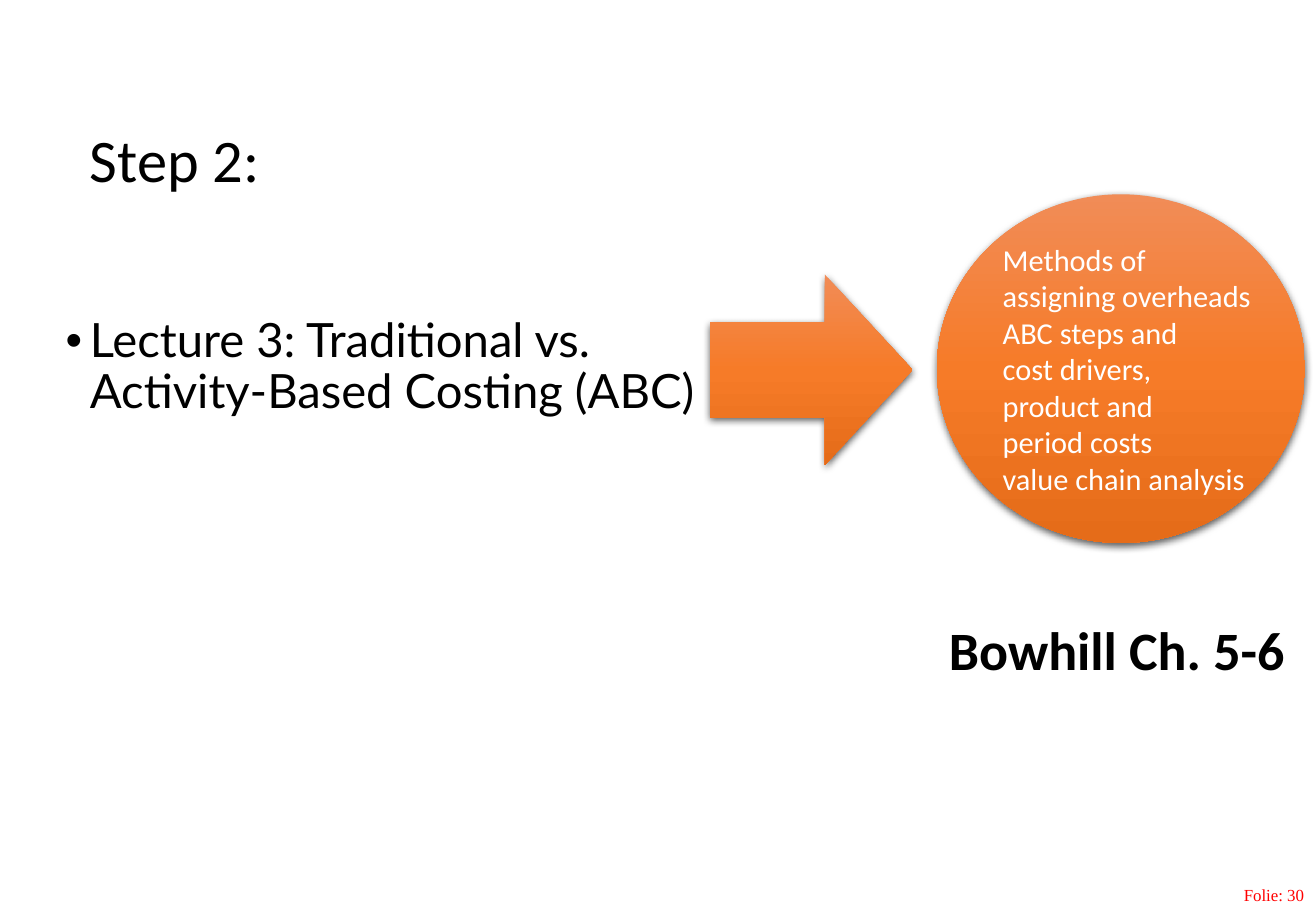
from lxml import etree
from pptx import Presentation
from pptx.dml.color import RGBColor
from pptx.enum.shapes import MSO_SHAPE
from pptx.enum.text import MSO_ANCHOR, MSO_AUTO_SIZE, PP_ALIGN
from pptx.oxml.ns import qn
from pptx.util import Inches, Pt

ELLIPSE, ARROW = MSO_SHAPE.OVAL, MSO_SHAPE.RIGHT_ARROW
TOP, MIDDLE = MSO_ANCHOR.TOP, MSO_ANCHOR.MIDDLE
LEFT, RIGHT = PP_ALIGN.LEFT, PP_ALIGN.RIGHT
NO_FIT = MSO_AUTO_SIZE.NONE
ORANGES = [(0, "F18C57"), (50, "F67B28"), (100, "E56C19")]
TOPICS = [
    "Methods of\vassigning overheads",
    "ABC steps and\vcost drivers,\vproduct and\vperiod costs\vvalue chain analysis",
]


def color(value):
    """Return the colour for a hex string."""
    return RGBColor.from_string(value)


def apply(obj, values):
    """Set attributes of an object from a dict."""
    for name, value in values.items():
        setattr(obj, name, value)


def place(sp, box):
    """Move a shape to a box given in inches."""
    apply(sp, dict(zip(("left", "top", "width", "height"), map(Inches, box))))


def write(tf, lines, font, fill, para=None, **frame):
    """Fill a text frame with formatted paragraphs."""
    apply(tf, {"word_wrap": True, "auto_size": NO_FIT, "vertical_anchor": TOP, **frame})
    for i, line in enumerate(lines):
        p = tf.add_paragraph() if i else tf.paragraphs[0]
        p.text = line
        apply(p, {"alignment": LEFT, "space_before": Pt(0), **(para or {})})
        for r in p.runs:
            apply(r.font, font)
            r.font.color.rgb = color(fill)


def add_child(parent, tag, **attrs):
    """Append a drawing element and return it."""
    return etree.SubElement(parent, qn(tag), {k: str(v) for k, v in attrs.items()})


def add_glossy(slide, kind, box):
    """Add an orange gradient shape with a soft shadow below it."""
    sp = slide.shapes.add_shape(kind, *map(Inches, box))
    sp.fill.gradient()
    sp.fill.gradient_angle = 270
    stops = sp._element.spPr.find(qn("a:gradFill")).find(qn("a:gsLst"))
    for stop in list(stops):
        stops.remove(stop)
    for pos, value in ORANGES:
        add_child(add_child(stops, "a:gs", pos=pos * 1000), "a:srgbClr", val=value)
    sp.line.fill.background()
    sp.shadow.inherit = False
    effects = sp._element.spPr.find(qn("a:effectLst"))
    shadow = add_child(effects, "a:outerShdw", blurRad=Pt(4.5), dist=Pt(1.5),
                       dir=5400000, rotWithShape=0)
    black = add_child(shadow, "a:srgbClr", val="000000")
    add_child(black, "a:alpha", val=63000)
    return sp


def add_label(slide, box, text, font, fill, **options):
    """Add a one-line text box."""
    sp = slide.shapes.add_textbox(*map(Inches, box))
    write(sp.text_frame, [text], font, fill, **options)


def add_title(slide, box):
    """Place the step title."""
    sp = slide.shapes.title
    place(sp, box)
    write(sp.text_frame, ["Step 2:"], {"name": "Calibri", "size": Pt(35.8)}, "000000",
          para={"line_spacing": 0.9}, vertical_anchor=MIDDLE)


def add_lecture(slide, box):
    """Place the bulleted lecture name."""
    sp = slide.placeholders[1]
    place(sp, box)
    insets = dict.fromkeys(
        ("margin_left", "margin_top", "margin_right", "margin_bottom"), Inches(0.04))
    write(sp.text_frame, ["Lecture 3: Traditional vs. Activity-Based Costing (ABC)"],
          {"name": "Lato", "size": Pt(28)}, "000000", para={"line_spacing": 0.9}, **insets)
    pPr = sp.text_frame.paragraphs[0]._p.get_or_add_pPr()
    pPr.set("marL", str(Inches(0.2)))
    pPr.set("indent", str(Inches(-0.2)))
    add_child(pPr, "a:buFont", typeface="Arial")
    add_child(pPr, "a:buChar", char="•")


def add_topics(slide, box):
    """Draw the arrow and the circle of topics inside the box."""
    left, top, width, height = box
    circle_width = 3.03
    circle = add_glossy(slide, ELLIPSE,
                        (left + width - circle_width, top, circle_width, height))
    write(circle.text_frame, TOPICS, {"name": "Calibri", "size": Pt(18)}, "FFFFFF",
          word_wrap=False, vertical_anchor=MIDDLE)
    arrow = add_glossy(slide, ARROW, (left, top + 0.66, 1.67, 1.57))
    arrow.adjustments[0], arrow.adjustments[1] = 0.5, 0.46


def main():
    """Build the slide and save it."""
    prs = Presentation()
    prs.slide_width, prs.slide_height = Inches(10.83), Inches(7.5)
    slide = prs.slides.add_slide(prs.slide_layouts[1])
    add_label(slide, (7.31, 7.23, 3.52, 0.27), "Folie: 30",
              {"name": "Times New Roman", "size": Pt(10)}, "FF0000",
              para={"alignment": RIGHT})
    add_title(slide, (0.64, 0.72, 9.75, 1.25))
    add_lecture(slide, (0.5, 2.57, 5.43, 4.31))
    add_topics(slide, (5.84, 1.6, 4.9, 2.87))
    add_label(slide, (7.71, 5.03, 3, 0.64), "Bowhill Ch. 5-6",
              {"name": "Calibri", "size": Pt(32), "bold": True}, "000000",
              word_wrap=False)
    prs.save("out.pptx")


if __name__ == "__main__":
    main()
